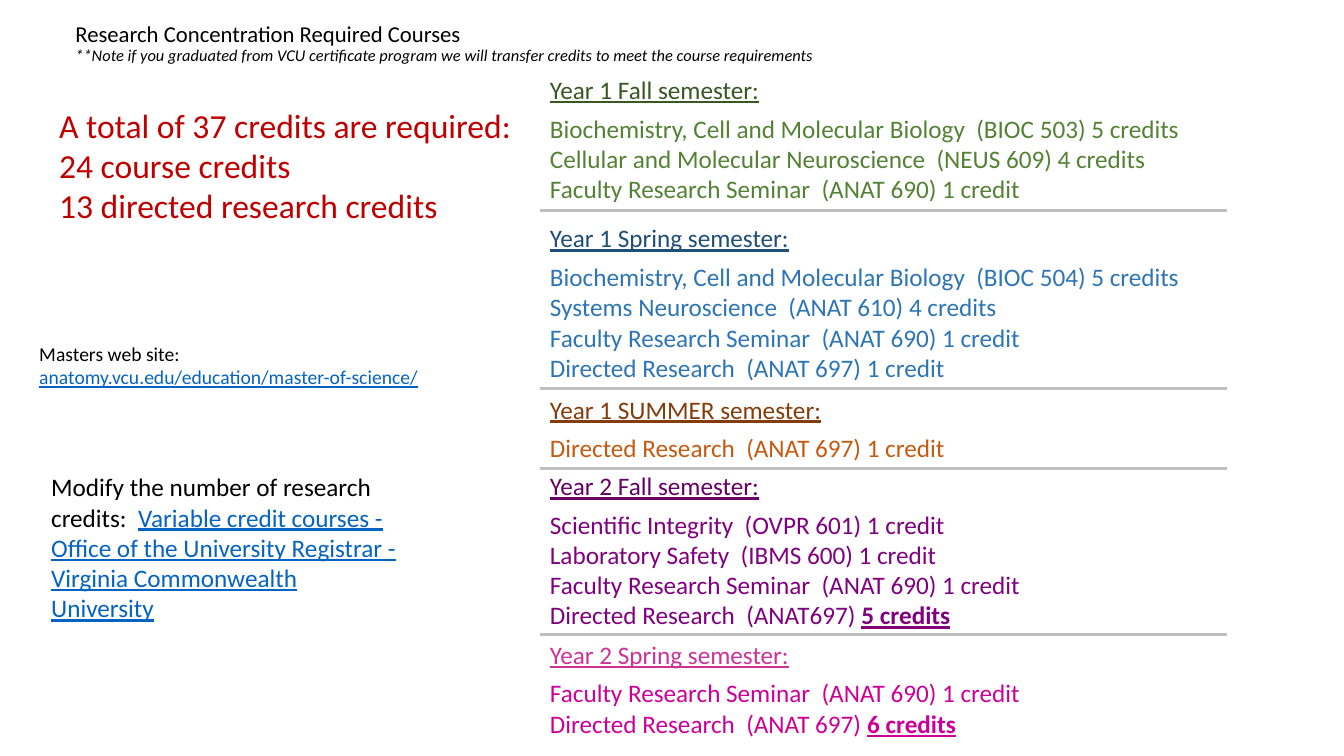
from dataclasses import dataclass

from lxml import etree
from pptx import Presentation
from pptx.dml.color import RGBColor
from pptx.enum.shapes import MSO_CONNECTOR
from pptx.enum.text import MSO_ANCHOR
from pptx.oxml.ns import qn
from pptx.util import Cm, Pt

STRAIGHT = MSO_CONNECTOR.STRAIGHT
TOP, MIDDLE = MSO_ANCHOR.TOP, MSO_ANCHOR.MIDDLE


@dataclass(frozen=True)
class Theme:
    font: str = "Calibri"
    ink: str = "000000"
    link: str = "0563C1"
    credit_total: str = "C00000"
    divider: str = "BFBFBF"
    divider_width: float = 2.25
    heading: float = 16.2
    note: float = 11.7
    total: float = 24
    body: float = 18
    site: float = 14
    # Name and course colours of each semester
    fall_1: tuple = ("385723", "548235")
    spring_1: tuple = ("1F4E79", "2E75B6")
    summer_1: tuple = ("843C0B", "C55A11")
    fall_2: tuple = ("660066", "800080")
    spring_2: tuple = ("CC3399", "CC0099")


THEME = Theme()


def add_text(paragraph, text, *, size, color=THEME.ink, bold=None, italic=None,
             underline=None):
    """Append text to a paragraph in the given format."""
    run = paragraph.add_run()
    run.text = text
    run.font.name = THEME.font
    run.font.size = Pt(size)
    run.font.color.rgb = RGBColor.from_string(color)
    run.font.bold, run.font.italic, run.font.underline = bold, italic, underline


class CourseSlide:
    # Semester column, in centimetres
    COLUMN_LEFT, COLUMN_WIDTH, DIVIDER_WIDTH = 13.61, 17.91, 17.3
    LINE_HEIGHT, SEMESTER_PADDING = 0.77, 0.46

    def __init__(self, slide, theme):
        self.slide = slide
        self.theme = theme

    def text_box(self, left, top, width, height, anchor=TOP):
        box = self.slide.shapes.add_textbox(Cm(left), Cm(top), Cm(width), Cm(height))
        frame = box.text_frame
        frame.word_wrap = True
        frame.vertical_anchor = anchor
        return frame

    def title(self, heading, note):
        paragraph = self.text_box(1.65, 0.58, 29.21, 1.07, MIDDLE).paragraphs[0]
        paragraph.line_spacing = 0.9
        add_text(paragraph, heading, size=self.theme.heading)
        paragraph.add_line_break()
        add_text(paragraph, note, size=self.theme.note, italic=True)

    def semester(self, top, name, colors, courses):
        name_color, course_color = colors
        height = self.LINE_HEIGHT * (len(courses) + 1) + self.SEMESTER_PADDING
        frame = self.text_box(self.COLUMN_LEFT, top, self.COLUMN_WIDTH, height)
        name_line = frame.paragraphs[0]
        name_line.space_after = Pt(6)
        add_text(name_line, name, size=self.theme.body, color=name_color, underline=True)
        for course, stressed_credits in courses:
            line = frame.add_paragraph()
            add_text(line, course, size=self.theme.body, color=course_color)
            if stressed_credits:
                add_text(line, stressed_credits, size=self.theme.body,
                         color=course_color, bold=True, underline=True)

    def divider(self, y):
        left, right = Cm(self.COLUMN_LEFT), Cm(self.COLUMN_LEFT + self.DIVIDER_WIDTH)
        rule = self.slide.shapes.add_connector(STRAIGHT, left, Cm(y), right, Cm(y))
        rule.line.color.rgb = RGBColor.from_string(self.theme.divider)
        rule.line.width = Pt(self.theme.divider_width)
        etree.SubElement(rule._element.spPr, qn("a:effectLst"))

    def credit_total(self, lines):
        frame = self.text_box(1.24, 2.51, 13.61, 3.33)
        for index, text in enumerate(lines):
            paragraph = frame.add_paragraph() if index else frame.paragraphs[0]
            add_text(paragraph, text, size=self.theme.total, color=self.theme.credit_total)

    def web_site(self, label, address):
        frame = self.text_box(0.74, 8.48, 12.29, 1.45)
        add_text(frame.paragraphs[0], label, size=self.theme.site)
        add_text(frame.add_paragraph(), address, size=self.theme.site,
                 color=self.theme.link, underline=True)

    def registrar(self, label, page):
        paragraph = self.text_box(1.04, 11.76, 9.22, 4.11).paragraphs[0]
        add_text(paragraph, label, size=self.theme.body)
        add_text(paragraph, page, size=self.theme.body, color=self.theme.link,
                 underline=True)


SEMINAR = ("Faculty Research Seminar  (ANAT 690) 1 credit", "")
RESEARCH = ("Directed Research  (ANAT 697) 1 credit", "")

# Top, name, colours, courses with stressed credits
SEMESTERS = [
    (1.75, "Year 1 Fall semester:", THEME.fall_1, [
        ("Biochemistry, Cell and Molecular Biology  (BIOC 503) 5 credits", ""),
        ("Cellular and Molecular Neuroscience  (NEUS 609) 4 credits", ""),
        SEMINAR,
    ]),
    (5.49, "Year 1 Spring semester:", THEME.spring_1, [
        ("Biochemistry, Cell and Molecular Biology  (BIOC 504) 5 credits", ""),
        ("Systems Neuroscience  (ANAT 610) 4 credits", ""),
        SEMINAR,
        RESEARCH,
    ]),
    (9.8, "Year 1 SUMMER semester:", THEME.summer_1, [RESEARCH]),
    (11.73, "Year 2 Fall semester:", THEME.fall_2, [
        ("Scientific Integrity  (OVPR 601) 1 credit", ""),
        ("Laboratory Safety  (IBMS 600) 1 credit", ""),
        SEMINAR,
        ("Directed Research  (ANAT697) ", "5 credits"),
    ]),
    (15.98, "Year 2 Spring semester:", THEME.spring_2, [
        SEMINAR,
        ("Directed Research  (ANAT 697) ", "6 credits"),
    ]),
]
DIVIDERS = [5.31, 9.78, 11.81, 15.98]


def main():
    deck = Presentation()
    deck.slide_width, deck.slide_height = Cm(33.87), Cm(19.05)
    page = CourseSlide(deck.slides.add_slide(deck.slide_layouts[6]), THEME)

    # Heading
    page.title(
        "Research Concentration Required Courses",
        "**Note if you graduated from VCU certificate program we will transfer "
        "credits to meet the course requirements",
    )

    # Semester column
    for semester in SEMESTERS:
        page.semester(*semester)
    for y in DIVIDERS:
        page.divider(y)

    # Left column
    page.credit_total([
        "A total of 37 credits are required:",
        "24 course credits",
        "13 directed research credits",
    ])
    page.web_site("Masters web site:", "anatomy.vcu.edu/education/master-of-science/")
    page.registrar(
        "Modify the number of research credits:  ",
        "Variable credit courses - Office of the University Registrar - "
        "Virginia Commonwealth University",
    )

    deck.save("out.pptx")


if __name__ == "__main__":
    main()
